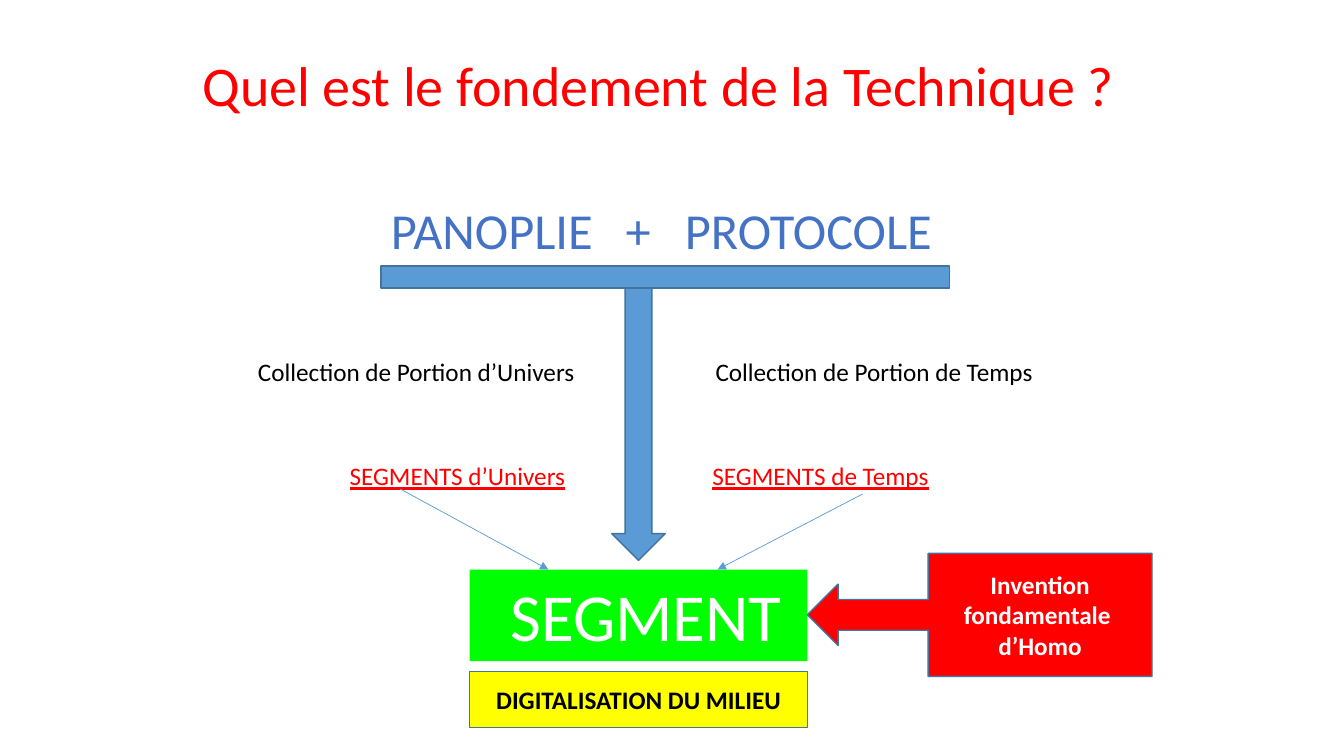
from dataclasses import dataclass
from typing import Optional

from lxml import etree
from pptx import Presentation
from pptx import util as u
from pptx.dml.color import RGBColor
from pptx.enum import shapes, text
from pptx.oxml.ns import qn


@dataclass(frozen=True)
class Theme:
    font: str = "Calibri"
    red: str = "FF0000"
    green: str = "00FF00"
    yellow: str = "FFFF00"
    black: str = "000000"
    white: str = "FFFFFF"
    heading: str = "4472C4"
    blue: str = "5B9BD5"
    outline: str = "43739E"
    body_size: int = 18
    formula_size: int = 36
    title_size: int = 40
    segment_size: int = 48


T = Theme()
Box = tuple[float, float, float, float]  # left, top, width, height in points


@dataclass(frozen=True)
class Label:
    box: Box
    words: str
    color: str
    size: int = T.body_size
    underline: Optional[bool] = None
    tabs: tuple[tuple[float, str], ...] = ()


@dataclass(frozen=True)
class Block:
    kind: shapes.MSO_SHAPE
    box: Box
    fill: str
    line: Optional[str] = T.outline
    words: str = ""
    color: str = T.white
    size: int = T.body_size
    bold: Optional[bool] = True
    align: text.PP_ALIGN = text.PP_ALIGN.CENTER
    anchor: text.MSO_ANCHOR = text.MSO_ANCHOR.MIDDLE
    left_inset: float = 7.2


@dataclass(frozen=True)
class Arrow:
    start: tuple[float, float]
    end: tuple[float, float]


def rgb(value: str) -> RGBColor:
    return RGBColor.from_string(value)


def apply(target, formats: dict) -> None:
    for name, value in formats.items():
        setattr(target, name, value)


def write(tf, words: str, color: str, font: dict, align=None) -> None:
    for i, line in enumerate(words.split("\n")):
        p = tf.paragraphs[0] if i == 0 else tf.add_paragraph()
        p.alignment = align
        r = p.add_run()
        r.text = line
        apply(r.font, {"name": T.font, **font})
        r.font.color.rgb = rgb(color)


def add_label(s, label: Label) -> None:
    tf = s.shapes.add_textbox(*map(u.Pt, label.box)).text_frame
    apply(tf, {"word_wrap": False, "auto_size": text.MSO_AUTO_SIZE.SHAPE_TO_FIT_TEXT})
    write(tf, label.words, label.color,
          {"size": u.Pt(label.size), "underline": label.underline})
    if label.tabs:
        ppr = tf.paragraphs[0]._p.get_or_add_pPr()
        stops = etree.SubElement(ppr, qn("a:tabLst"))
        for pos, align in label.tabs:
            etree.SubElement(stops, qn("a:tab"), pos=str(int(u.Pt(pos))), algn=align)


def add_block(s, block: Block) -> None:
    sp = s.shapes.add_shape(block.kind, *map(u.Pt, block.box))
    sp.shadow.inherit = False
    sp.fill.solid()
    sp.fill.fore_color.rgb = rgb(block.fill)
    if block.line:
        sp.line.color.rgb = rgb(block.line)
        sp.line.width = u.Pt(1)
    else:
        sp.line.fill.background()
    if block.words:
        apply(sp.text_frame, {"word_wrap": True, "vertical_anchor": block.anchor,
                              "margin_left": u.Pt(block.left_inset)})
        write(sp.text_frame, block.words, block.color,
              {"size": u.Pt(block.size), "bold": block.bold}, block.align)


def add_arrow(s, arrow: Arrow) -> None:
    cx = s.shapes.add_connector(shapes.MSO_CONNECTOR.STRAIGHT,
                                *map(u.Pt, arrow.start + arrow.end))
    cx.line.color.rgb = rgb(T.blue)
    cx.line.width = u.Pt(0.5)
    etree.SubElement(cx.line._get_or_add_ln(), qn("a:tailEnd"), type="triangle")
    etree.SubElement(cx._element.spPr, qn("a:effectLst"))


# Shared edges of the central column and of the bar under the formula
SEGMENT_LEFT, SEGMENT_TOP, SEGMENT_WIDTH = 335.5, 406.8, 241.2
BAR_LEFT, BAR_WIDTH = 272.2, 406.1
COLLECTION_TOP, SEGMENTS_TOP, LABEL_HEIGHT = 251.3, 325.4, 28.8

LABELS = [
    Label((137.5, 32.4, 685.4, 55.4), "Quel est le fondement de la Technique ?",
          T.red, T.title_size),
    Label((BAR_LEFT, 139, BAR_WIDTH, 51.1), "PANOPLIE\t+\tPROTOCOLE", T.heading,
          T.formula_size, tabs=((176.5, "ctr"), (210, "l"))),
    Label((177.1, COLLECTION_TOP, 243.4, LABEL_HEIGHT),
          "Collection de Portion d’Univers", T.black),
    Label((504, COLLECTION_TOP, 244.1, LABEL_HEIGHT),
          "Collection de Portion de Temps", T.black),
    Label((242.6, SEGMENTS_TOP, 174.2, LABEL_HEIGHT), "SEGMENTS d’Univers",
          T.red, underline=True),
    Label((501.8, SEGMENTS_TOP, 175, LABEL_HEIGHT), "SEGMENTS de Temps",
          T.red, underline=True),
]

BLOCKS = [
    Block(shapes.MSO_SHAPE.RECTANGLE, (SEGMENT_LEFT, 479.5, SEGMENT_WIDTH, 40.3),
          T.yellow, words="DIGITALISATION DU MILIEU", color=T.black),
    Block(shapes.MSO_SHAPE.RECTANGLE, (SEGMENT_LEFT, SEGMENT_TOP, SEGMENT_WIDTH, 65.5),
          T.green, None, "SEGMENT", size=T.segment_size, bold=None,
          align=text.PP_ALIGN.LEFT, anchor=text.MSO_ANCHOR.TOP, left_inset=28.9),
    Block(shapes.MSO_SHAPE.DOWN_ARROW, (437, 204.5, 38.2, 195.8), T.blue),
    Block(shapes.MSO_SHAPE.RECTANGLE, (BAR_LEFT, 190.1, BAR_WIDTH, 15.8), T.blue),
    Block(shapes.MSO_SHAPE.LEFT_ARROW_CALLOUT,
          (SEGMENT_LEFT + SEGMENT_WIDTH, 395.3, 246.2, 87.8), T.red,
          words="Invention\nfondamentale \nd’Homo"),
]

ARROWS = [
    Arrow((285.8, 349.2), (391.7, SEGMENT_TOP)),
    Arrow((616.3, 352.8), (512.6, SEGMENT_TOP)),
]


def main() -> None:
    prs = Presentation()
    apply(prs, {"slide_width": u.Pt(960), "slide_height": u.Pt(540)})
    s = prs.slides.add_slide(prs.slide_layouts[6])
    # Title, formula and captions
    for label in LABELS:
        add_label(s, label)
    # Bar, boxes and block arrows
    for block in BLOCKS:
        add_block(s, block)
    # Thin arrows towards the segment
    for arrow in ARROWS:
        add_arrow(s, arrow)
    prs.save("out.pptx")


if __name__ == "__main__":
    main()
